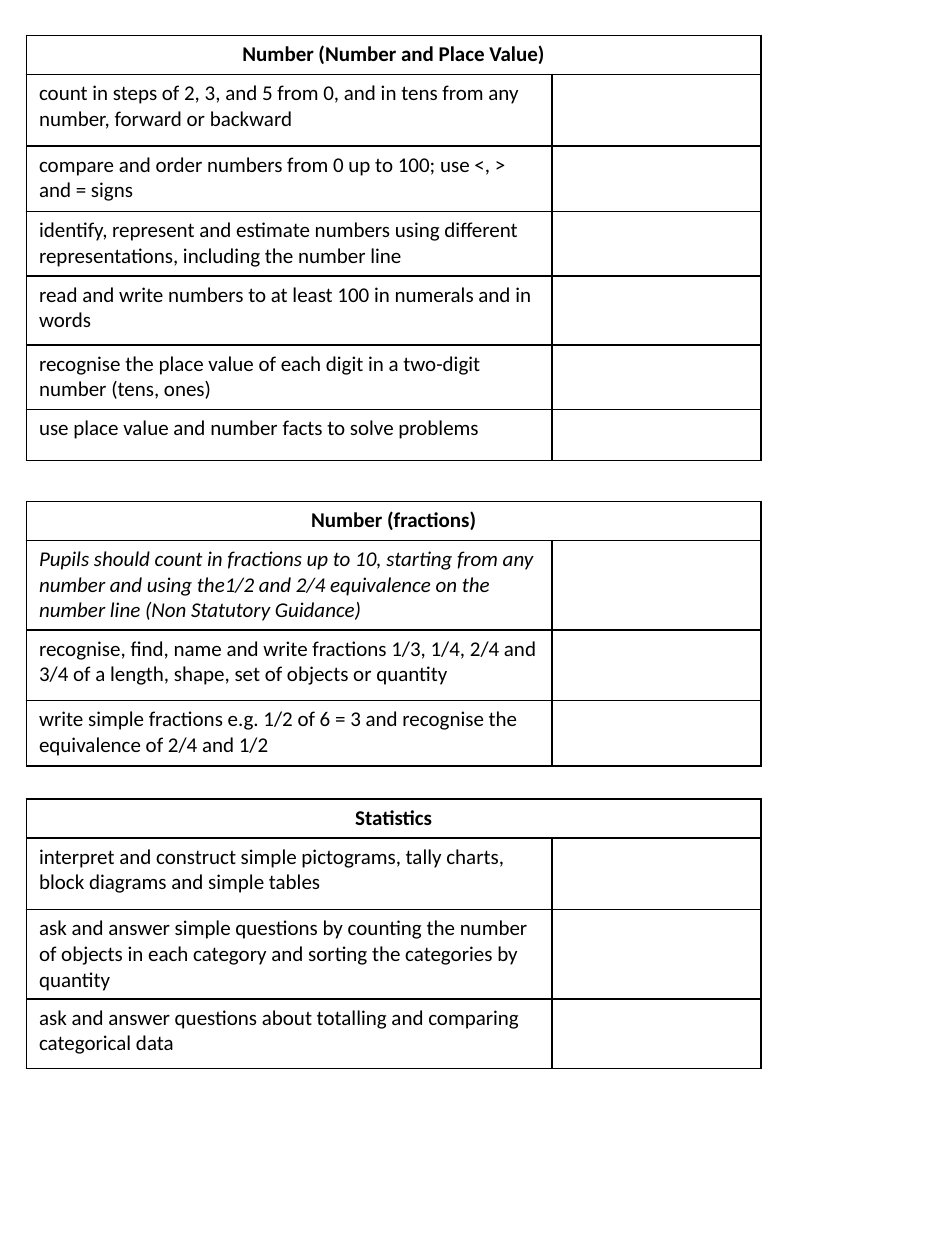
from lxml.etree import SubElement
from pptx import Presentation
from pptx.dml.color import RGBColor
from pptx.enum.text import PP_ALIGN
from pptx.oxml.ns import qn
from pptx.util import Inches, Pt

COLORS = {"ink": "000000"}
FONT = "Calibri"
LEFT = 0.21
COLUMN_WIDTHS = (4.17, 1.66)
HEADER_HEIGHT = 0.31

# Each table: title, top, then (objective, row height) pairs
TABLES = [
    ("Number (Number and Place Value)", 0.28, [
        ("count in steps of 2, 3, and 5 from 0, and in tens from any number, forward or backward", 0.57),
        ("compare and order numbers from 0 up to 100; use <, > and = signs", 0.52),
        ("identify, represent and estimate numbers using different representations, "
         "including the number line", 0.51),
        ("read and write numbers to at least 100 in numerals and in words", 0.55),
        ("recognise the place value of each digit in a two-digit number (tens, ones)", 0.51),
        ("use place value and number facts to solve problems", 0.36),
    ]),
    ("Number (fractions)", 3.98, [
        ("Pupils should count in fractions up to 10, starting from any number and using "
         "the1/2 and 2/4 equivalence on the number line (Non Statutory Guidance)", 0.71),
        ("recognise, find, name and write fractions 1/3, 1/4, 2/4 and 3/4 of a length, "
         "shape, set of objects or quantity", 0.56),
        ("write simple fractions e.g. 1/2 of 6 = 3 and recognise the equivalence of 2/4 and 1/2", 0.52),
    ]),
    ("Statistics", 6.34, [
        ("interpret and construct simple pictograms, tally charts, block diagrams and simple tables", 0.57),
        ("ask and answer simple questions by counting the number of objects in each category "
         "and sorting the categories by quantity", 0.71),
        ("ask and answer questions about totalling and comparing categorical data", 0.55),
    ]),
]


def style_cell(cell):
    """Give a cell thin borders on all sides and no fill."""
    properties = cell._tc.get_or_add_tcPr()
    for side in ("a:lnL", "a:lnR", "a:lnT", "a:lnB"):
        line = SubElement(properties, qn(side), w=str(Pt(1)))
        fill = SubElement(line, qn("a:solidFill"))
        SubElement(fill, qn("a:srgbClr"), val=COLORS["ink"])
    cell.fill.background()


def write_cell(cell, text, bold=False, italic=False, alignment=PP_ALIGN.LEFT):
    cell.text_frame.text = text
    paragraph = cell.text_frame.paragraphs[0]
    paragraph.alignment = alignment
    font = paragraph.runs[0].font
    font.name = FONT
    font.size = Pt(12)
    font.bold = bold
    font.italic = italic
    font.color.rgb = RGBColor.from_string(COLORS["ink"])


def add_objectives_table(slide, title, top, objectives):
    heights = [HEADER_HEIGHT] + [height for _, height in objectives]
    table = slide.shapes.add_table(
        len(heights), len(COLUMN_WIDTHS), Inches(LEFT), Inches(top),
        Inches(sum(COLUMN_WIDTHS)), Inches(sum(heights))).table
    table.first_row = False
    table.horz_banding = False
    for column, width in zip(table.columns, COLUMN_WIDTHS):
        column.width = Inches(width)
    for row, height in zip(table.rows, heights):
        row.height = Inches(height)
    for cell in table.iter_cells():
        style_cell(cell)

    # Title row across both columns
    table.cell(0, 0).merge(table.cell(0, 1))
    write_cell(table.cell(0, 0), title, bold=True, alignment=PP_ALIGN.CENTER)

    # Objectives, with guidance in italics
    for row_index, (objective, _) in enumerate(objectives, start=1):
        write_cell(table.cell(row_index, 0), objective,
                   italic="Non Statutory" in objective)


def main():
    presentation = Presentation()
    presentation.slide_width = Inches(7.5)
    presentation.slide_height = Inches(10)
    slide = presentation.slides.add_slide(presentation.slide_layouts[6])
    for title, top, objectives in TABLES:
        add_objectives_table(slide, title, top, objectives)
    presentation.save("out.pptx")


if __name__ == "__main__":
    main()
